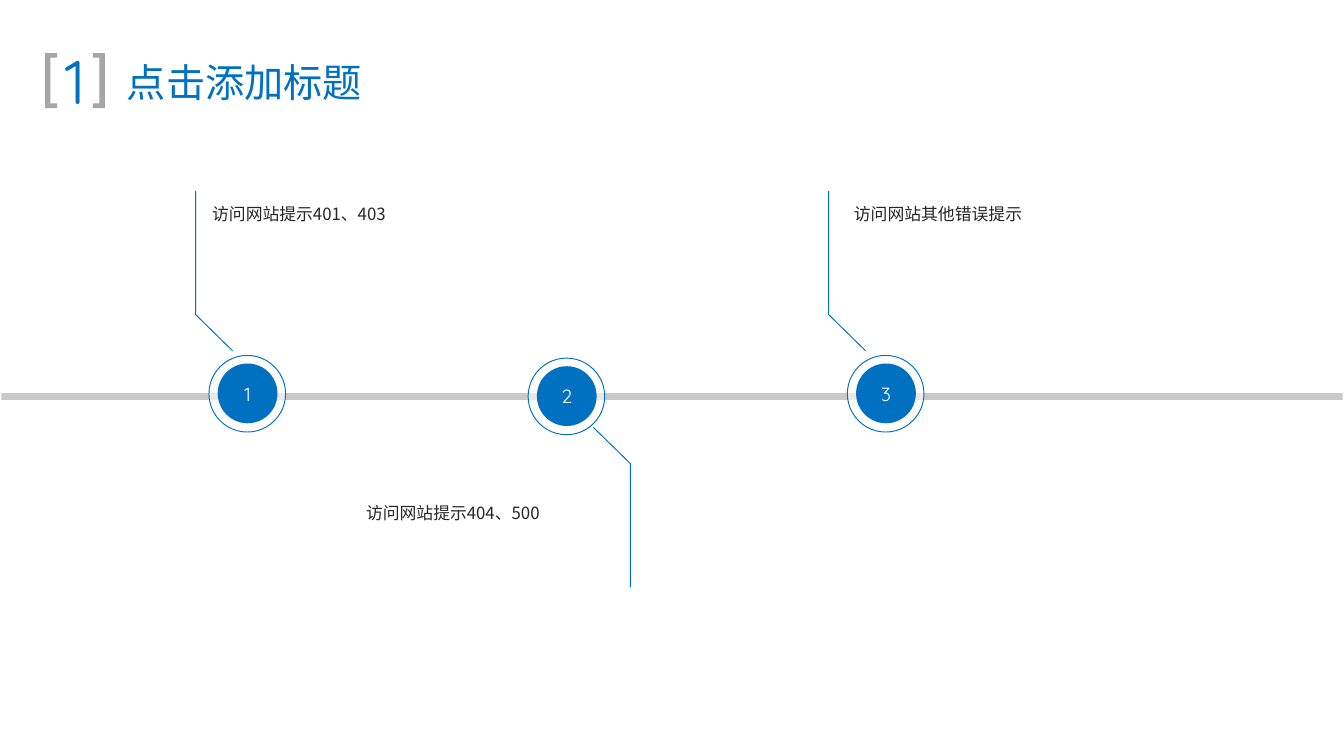
from lxml.etree import SubElement
from pptx import Presentation
from pptx.dml.color import RGBColor
from pptx.enum.shapes import MSO_SHAPE
from pptx.enum.text import MSO_ANCHOR, MSO_AUTO_SIZE, PP_ALIGN
from pptx.oxml.ns import qn
from pptx.util import Pt

PX = 4572
COLORS = {"blue": "0070C0", "gray": "A6A6A6", "white": "FFFFFF", "ink": "262626"}
LATIN, CJK = "Quicksand", "Noto Sans CJK SC"


def rgb(name):
    return RGBColor.from_string(COLORS[name])


def style(sp, fill=None, line=None, alpha=None):
    sp.shadow.inherit = False
    if fill:
        sp.fill.solid()
        sp.fill.fore_color.rgb = rgb(fill)
    else:
        sp.fill.background()
    if alpha:
        clr = sp._element.spPr.find(qn("a:solidFill"))[0]
        SubElement(clr, qn("a:alpha")).set("val", str(alpha * 1000))
    if line:
        sp.line.color.rgb = rgb(line)
        sp.line.width = Pt(0.5)
    else:
        sp.line.fill.background()


def add_preset(s, kind, box, **look):
    sp = s.shapes.add_shape(kind, *(v * PX for v in box))
    style(sp, **look)
    return sp


def add_path(s, x, y, points, close=False, **look):
    pts = [(x + dx, y + dy) for dx, dy in points]
    fb = s.shapes.build_freeform(*pts[0], scale=PX)
    fb.add_line_segments(pts[1:], close=close)
    style(fb.convert_to_shape(), **look)


def set_text(sp, text, size, font, color, align=PP_ALIGN.CENTER):
    p = sp.text_frame.paragraphs[0]
    p.text = text
    p.alignment = align
    p.font.size = Pt(size)
    p.font.name = font
    p.font.color.rgb = rgb(color)
    return p


def add_text(s, box, text, size, font, color, align, wrap):
    sp = s.shapes.add_textbox(*(v * PX for v in box))
    tf = sp.text_frame
    tf.word_wrap = wrap
    tf.auto_size = MSO_AUTO_SIZE.SHAPE_TO_FIT_TEXT
    return tf, set_text(sp, text, size, font, color, align)


def add_header(s, x, y, number, title):
    for box, text, size in (((x + 100, y - 2, 394, 90), title, 21),
                            ((x - 2, y - 23, 94, 128), number, 33)):
        tf, p = add_text(s, box, text, size, LATIN, "blue", PP_ALIGN.CENTER, False)
        tf.vertical_anchor = MSO_ANCHOR.MIDDLE
    tf.margin_top = 8 * PX
    bracket = [(0, 0), (18, 0), (18, 7), (8, 7), (8, 75), (18, 75), (18, 82), (0, 82)]
    mirrored = [(89 - dx, dy) for dx, dy in bracket]
    for points in (bracket, mirrored):
        add_path(s, x, y, points, close=True, fill="gray")


def add_node(s, x, y, number):
    add_preset(s, MSO_SHAPE.OVAL, (x, y, 114, 114), fill="white", line="blue", alpha=60)
    disc = add_preset(s, MSO_SHAPE.OVAL, (x + 13, y + 12, 89, 89), fill="blue")
    disc.text_frame.vertical_anchor = MSO_ANCHOR.MIDDLE
    set_text(disc, number, 10.2, LATIN, "white")


def add_leader(s, x, y, below):
    points = [(0, 0), (0, 184), (55, 238)]
    if below:
        points = [(55 - dx, 238 - dy) for dx, dy in points]
    add_path(s, x, y, points, line="blue")


def add_label(s, x, y, w, text, align):
    tf, p = add_text(s, (x, y, w, 58), text, 9, CJK, "ink", align, True)
    p.line_spacing = 1.3
    for r in p.runs:
        SubElement(r._r.get_or_add_rPr(), qn("a:ea")).set("typeface", CJK)


def add_timeline(s, x, y, w, milestones):
    add_preset(s, MSO_SHAPE.RECTANGLE, (x, y, w, 10), fill="gray", alpha=60)
    for i, (node, leader, label, text, below) in enumerate(milestones, 1):
        add_node(s, x + node[0], y + node[1], str(i))
        add_leader(s, x + leader[0], y + leader[1], below)
        align = PP_ALIGN.LEFT if below else PP_ALIGN.JUSTIFY
        add_label(s, x + label[0], y + label[1], label[2], text, align)


def main():
    prs = Presentation()
    prs.slide_width, prs.slide_height = 2000 * PX, 1125 * PX
    s = prs.slides.add_slide(prs.slide_layouts[6])
    add_header(s, 67, 79, "1", "点击添加标题")
    add_timeline(s, 2, 585, 1996, [
        ((309, -56), (289, -301), (294, -301, 442), "访问网站提示401、403", False),
        ((784, -52), (881, 51), (523, 144, 398), "访问网站提示404、500", True),
        ((1259, -56), (1231, -301), (1249, -301, 456), "访问网站其他错误提示", False),
    ])
    prs.save("out.pptx")


if __name__ == "__main__":
    main()
